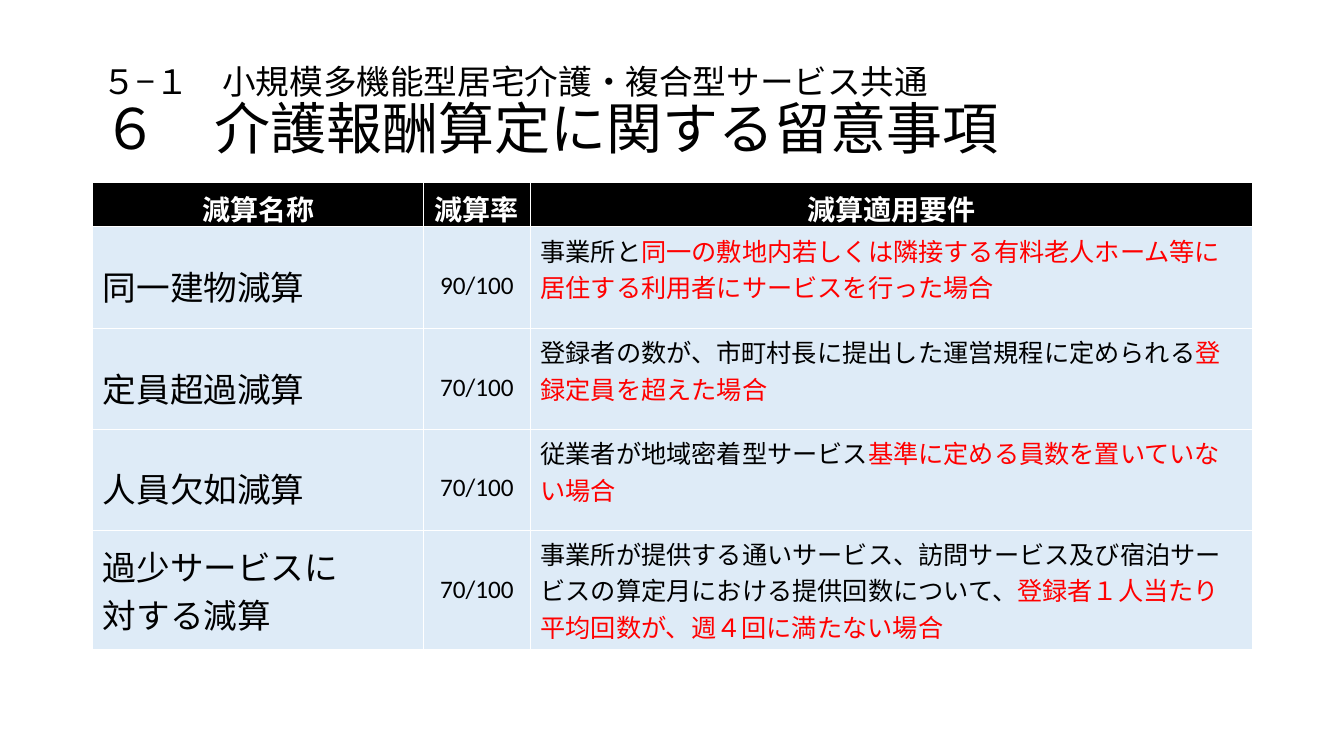
from dataclasses import dataclass

import pptx
import pptx.dml.color
import pptx.enum.text
import pptx.util

Inches = pptx.util.Inches
Pt = pptx.util.Pt
Align = pptx.enum.text.PP_ALIGN
Anchor = pptx.enum.text.MSO_ANCHOR


@dataclass(frozen=True)
class Theme:
    font: str = "Calibri"
    ink: str = "000000"
    alert: str = "FF0000"
    header_ink: str = "FFFFFF"
    header_fill: str = "000000"
    body_fill: str = "DEEBF7"
    section_size: int = 24
    title_size: int = 40
    header_size: int = 20
    name_size: int = 24
    detail_size: int = 18


@dataclass(frozen=True)
class Reduction:
    name: str
    rate: str
    condition: str
    key_condition: str


THEME = Theme()
LEFT, WIDTH = 0.92, 11.5
COLUMN_WIDTHS = (3.28, 1.06, 7.16)
HEADER_TOP, HEADER_HEIGHT = 1.81, 0.43
FIRST_TOP, ROW_PITCH, ROW_HEIGHT = 2.25, 1.0, 1.17
ROW_OFFSETS = (0, 1.01, 2.01, 3.01)

HEADINGS = ("減算名称", "減算率", "減算適用要件")
REDUCTIONS = (
    Reduction("同一建物減算", "90/100", "事業所と",
              "同一の敷地内若しくは隣接する有料老人ホーム等に居住する利用者にサービスを行った場合"),
    Reduction("定員超過減算", "70/100",
              "登録者の数が、市町村長に提出した運営規程に定められる",
              "登録定員を超えた場合"),
    Reduction("人員欠如減算", "70/100", "従業者が地域密着型サービス",
              "基準に定める員数を置いていない場合"),
    Reduction("過少サービスに\n対する減算", "70/100",
              "事業所が提供する通いサービス、訪問サービス及び宿泊サービスの算定月における提供回数について、",
              "登録者１人当たり平均回数が、週４回に満たない場合"),
)


def add_run(paragraph, text: str, size: int, color: str, bold: bool = False) -> None:
    run = paragraph.add_run()
    run.text = text
    formats = {"name": THEME.font, "size": Pt(size), "bold": bold}
    for attribute, value in formats.items():
        setattr(run.font, attribute, value)
    run.font.color.rgb = pptx.dml.color.RGBColor.from_string(color)


def fill_cell(cell, lines: list, size: int, fill: str, align=Align.LEFT,
              anchor=Anchor.MIDDLE, bold: bool = False) -> None:
    cell.fill.solid()
    cell.fill.fore_color.rgb = pptx.dml.color.RGBColor.from_string(fill)
    cell.vertical_anchor = anchor
    for index, pieces in enumerate(lines):
        frame = cell.text_frame
        paragraph = frame.add_paragraph() if index else frame.paragraphs[0]
        paragraph.alignment = align
        for text, color in pieces:
            add_run(paragraph, text, size, color, bold)


def add_row_table(slide, top: float, height: float):
    table = slide.shapes.add_table(1, len(COLUMN_WIDTHS), Inches(LEFT), Inches(top),
                                   Inches(WIDTH), Inches(height)).table
    for column, width in zip(table.columns, COLUMN_WIDTHS):
        column.width = Inches(width)
    return table


def add_header(slide) -> None:
    table = add_row_table(slide, HEADER_TOP, HEADER_HEIGHT)
    for index, heading in enumerate(HEADINGS):
        fill_cell(table.cell(0, index), [[(heading, THEME.header_ink)]],
                  THEME.header_size, THEME.header_fill, Align.CENTER, bold=True)


def add_reduction(slide, reduction: Reduction, top: float) -> None:
    table = add_row_table(slide, top, ROW_HEIGHT)
    name, rate, condition = (table.cell(0, index) for index in range(3))
    fill_cell(name, [[(line, THEME.ink)] for line in reduction.name.split("\n")],
              THEME.name_size, THEME.body_fill)
    fill_cell(rate, [[(reduction.rate, THEME.ink)]],
              THEME.detail_size, THEME.body_fill, Align.CENTER)
    fill_cell(condition, [[(reduction.condition, THEME.ink),
                           (reduction.key_condition, THEME.alert)]],
              THEME.detail_size, THEME.body_fill, anchor=Anchor.TOP)


def add_title(slide) -> None:
    title = slide.shapes.title
    place = {"left": LEFT, "top": 0.4, "width": WIDTH, "height": 1.45}
    for attribute, value in place.items():
        setattr(title, attribute, Inches(value))
    frame = title.text_frame
    formats = {"word_wrap": True, "vertical_anchor": Anchor.MIDDLE,
               "auto_size": pptx.enum.text.MSO_AUTO_SIZE.NONE}
    for attribute, value in formats.items():
        setattr(frame, attribute, value)
    paragraph = frame.paragraphs[0]
    paragraph.alignment = Align.LEFT
    paragraph.line_spacing = 0.9
    add_run(paragraph, "５−１\u3000小規模多機能型居宅介護・複合型サービス共通".replace("\u3000", "　"),
            THEME.section_size, THEME.ink)
    paragraph.add_line_break()
    add_run(paragraph, "６　介護報酬算定に関する留意事項", THEME.title_size, THEME.ink)


def main() -> None:
    deck = pptx.Presentation()
    deck.slide_width, deck.slide_height = Inches(13.33), Inches(7.5)
    slide = deck.slides.add_slide(deck.slide_layouts[5])
    add_title(slide)
    add_header(slide)
    for reduction, offset in zip(REDUCTIONS, ROW_OFFSETS):
        add_reduction(slide, reduction, FIRST_TOP + offset)
    deck.save("out.pptx")


if __name__ == "__main__":
    main()
